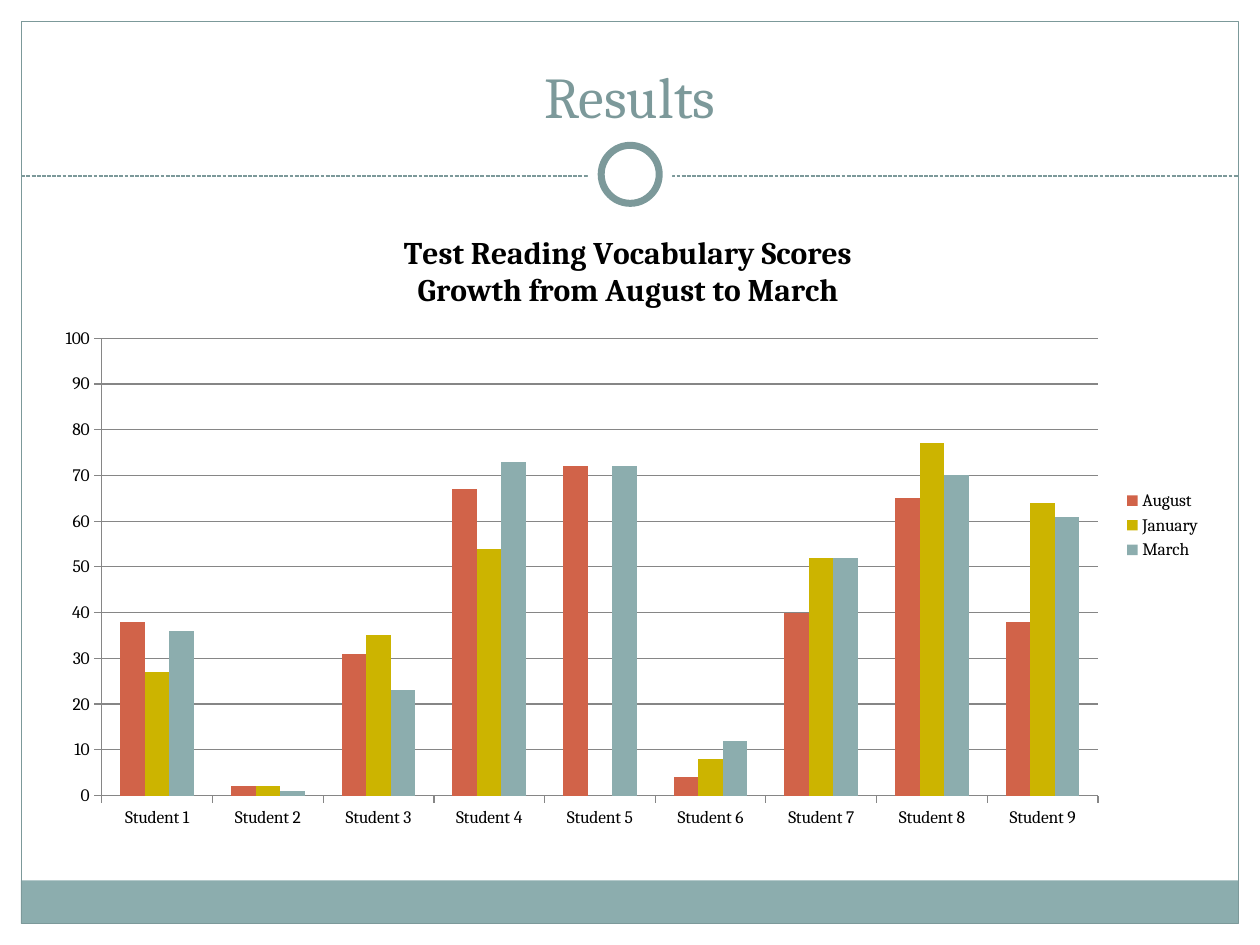
from lxml import etree
from pptx import Presentation
from pptx import util as u
from pptx.chart import data as chart_data
from pptx.dml.color import RGBColor
from pptx.enum import chart as chart_enum, dml, shapes, text
from pptx.oxml import ns

COLORS = {
    "white": "FFFFFF", "black": "000000", "teal": "7C999A", "grid": "868686",
    "August": "D16349", "January": "CCB400", "March": "8CADAE",
}
FONT = "Cambria"


def color(name):
    return RGBColor.from_string(COLORS[name])


def format_font(font, size, color_name, bold=False):
    values = {"name": FONT, "size": u.Pt(size), "bold": bold}
    for attribute, value in values.items():
        setattr(font, attribute, value)
    font.color.rgb = color(color_name)


presentation = Presentation()
presentation.slide_width = u.Cm(25.4)
presentation.slide_height = u.Cm(19.05)
slide = presentation.slides.add_slide(presentation.slide_layouts[5])

RECTANGLE = shapes.MSO_SHAPE.RECTANGLE
OVAL = shapes.MSO_SHAPE.OVAL
frame_parts = [
    (RECTANGLE, (0, 0, 25.4, 3.86), "white", None),
    (RECTANGLE, (0, 0, 0.43, 19.05), "white", None),
    (RECTANGLE, (24.97, 0, 0.43, 19.05), "white", None),
    (RECTANGLE, (0.42, 17.75, 24.54, 0.87), "March", None),
    (RECTANGLE, (0.43, 0.43, 24.54, 18.19), None, 0.75),
    ("divider", (0.43, 3.55, 24.97, 3.55), None, 0.75),
    (OVAL, (11.85, 2.67, 1.7, 1.7), "white", None),
    (OVAL, (12.12, 2.93, 1.17, 1.17), "white", 4),
]
for kind, position, fill, line_width in frame_parts:
    lengths = [u.Cm(value) for value in position]
    if kind == "divider":
        shape = slide.shapes.add_connector(shapes.MSO_CONNECTOR.STRAIGHT, *lengths)
        shape.line.dash_style = dml.MSO_LINE.SQUARE_DOT
        properties = shape.element.find(ns.qn("p:spPr"))
        etree.SubElement(properties, ns.qn("a:effectLst"))
    else:
        shape = slide.shapes.add_shape(kind, *lengths)
        shape.shadow.inherit = False
        if fill:
            shape.fill.solid()
            shape.fill.fore_color.rgb = color(fill)
        else:
            shape.fill.background()
    if line_width:
        shape.line.color.rgb = color("teal")
        shape.line.width = u.Pt(line_width)
    else:
        shape.line.fill.background()

title = slide.shapes.title
slide.shapes.element.append(title.element)
title_box = {"left": 0.85, "top": 0.64, "width": 23.7, "height": 2.11}
for attribute, value in title_box.items():
    setattr(title, attribute, u.Cm(value))
title.text_frame.text = "Results"
title_format = {
    "vertical_anchor": text.MSO_ANCHOR.BOTTOM,
    "auto_size": text.MSO_AUTO_SIZE.NONE,
    "word_wrap": True,
}
for attribute, value in title_format.items():
    setattr(title.text_frame, attribute, value)
paragraph = title.text_frame.paragraphs[0]
paragraph.alignment = text.PP_ALIGN.CENTER
format_font(paragraph.runs[0].font, 33, "teal")

scores = {
    "August": (38, 2, 31, 67, 72, 4, 40, 65, 38),
    "January": (27, 2, 35, 54, None, 8, 52, 77, 64),
    "March": (36, 1, 23, 73, 72, 12, 52, 70, 61),
}
score_data = chart_data.CategoryChartData()
score_data.categories = [f"Student {number}" for number in range(1, 10)]
for month, values in scores.items():
    score_data.add_series(month, values)
chart = slide.shapes.add_chart(
    chart_enum.XL_CHART_TYPE.COLUMN_CLUSTERED,
    u.Cm(0.85), u.Cm(4.24), u.Cm(23.62), u.Cm(12.7), score_data,
).chart
format_font(chart.font, 10, "black")

chart.has_title = True
chart_title = chart.chart_title.text_frame
chart_title.text = "Test Reading Vocabulary Scores\nGrowth from August to March"
for paragraph in chart_title.paragraphs:
    format_font(paragraph.runs[0].font, 18, "black", bold=True)

chart.has_legend = True
chart.legend.position = chart_enum.XL_LEGEND_POSITION.RIGHT
chart.legend.include_in_layout = False

plot = chart.plots[0]
plot_format = {"gap_width": 150, "overlap": 0, "vary_by_categories": False}
for attribute, value in plot_format.items():
    setattr(plot, attribute, value)
for series in plot.series:
    series.format.fill.solid()
    series.format.fill.fore_color.rgb = color(series.name)
    series.invert_if_negative = False

value_axis = chart.value_axis
axis_format = {
    "minimum_scale": 0, "maximum_scale": 100, "major_unit": 10,
    "has_major_gridlines": True,
}
for attribute, value in axis_format.items():
    setattr(value_axis, attribute, value)
for axis in (chart.category_axis, value_axis):
    axis.major_tick_mark = chart_enum.XL_TICK_MARK.OUTSIDE
for part in (chart.category_axis, value_axis, value_axis.major_gridlines):
    part.format.line.color.rgb = color("grid")
    part.format.line.width = u.Pt(0.75)

presentation.save("out.pptx")
